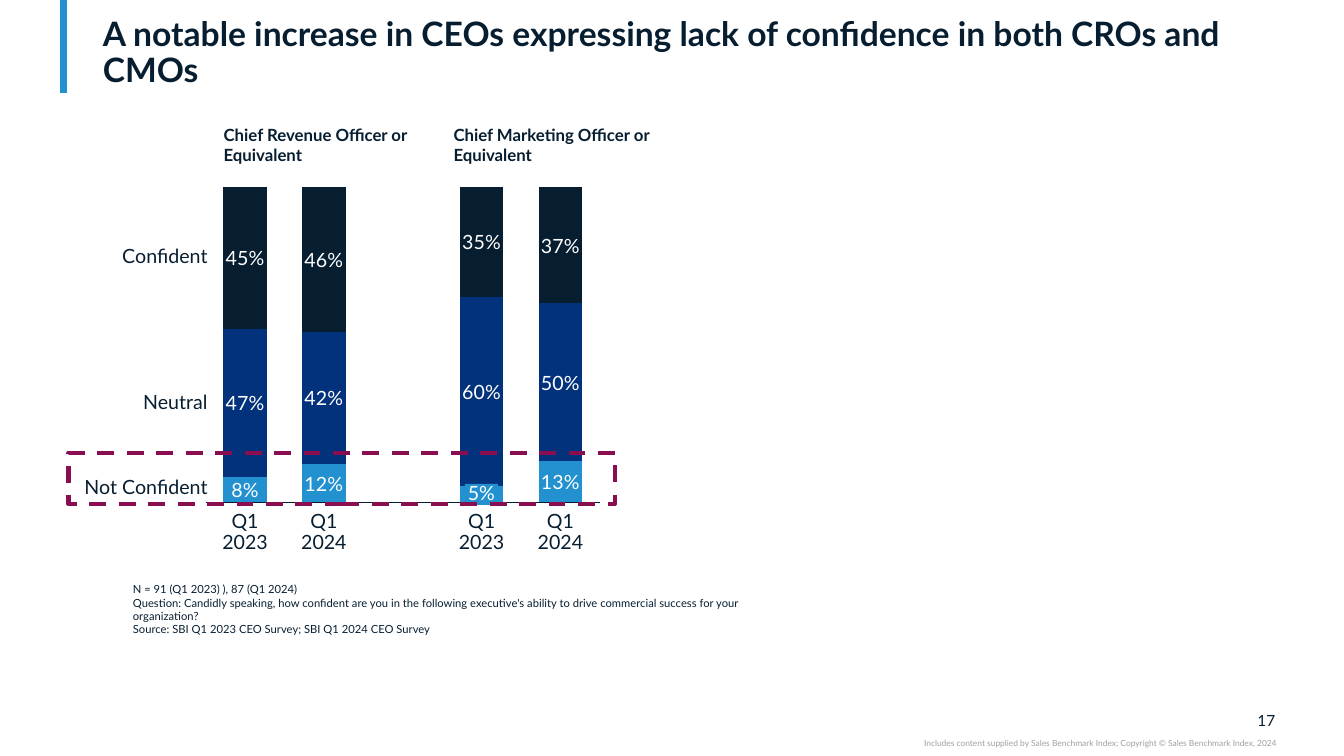
from dataclasses import dataclass

from lxml import etree
from pptx import Presentation
from pptx.chart.data import CategoryChartData
from pptx.dml.color import RGBColor
from pptx.enum import chart as ch, dml, shapes, text
from pptx.oxml import ns, parse_xml
from pptx.util import Inches, Pt


@dataclass(frozen=True)
class Theme:
    font: str = "Lato"
    ink: str = "071E31"
    navy: str = "03327C"
    sky: str = "2391CF"
    wine: str = "880E4F"
    gray: str = "A0A0A0"
    white: str = "FFFFFF"
    title: int = 24
    label: int = 14
    head: int = 12
    page: int = 11
    note: int = 8
    legal: int = 6


THEME = Theme()
LEFT, RIGHT, CENTER = text.PP_ALIGN.LEFT, text.PP_ALIGN.RIGHT, text.PP_ALIGN.CENTER
TOP, MIDDLE, BOTTOM = text.MSO_ANCHOR.TOP, text.MSO_ANCHOR.MIDDLE, text.MSO_ANCHOR.BOTTOM
NONE, FLUSH, INSET = (0, 0, 0, 0), (0.03, 0, 0.03, 0), (0.1, 0.05, 0.1, 0.05)

CHART = (1.95, 1.52, 4.09, 3.8)
PLOT = (0.022, 0.088, 0.956, 0.823)
QUARTERS = ["Q1 2023", "Q1 2024", None, "Q1 2023", "Q1 2024"]
LEVELS = [
    ("Not Confident", (8, 12, None, 5, 13), THEME.sky, 4.74),
    ("Neutral", (47, 42, None, 60, 50), THEME.navy, 3.89),
    ("Confident", (45, 46, None, 35, 37), THEME.ink, 2.45),
]
HEADS = [("Chief Revenue Officer or Equivalent", 2.12),
         ("Chief Marketing Officer or Equivalent", 4.4)]
NOTES = [
    "N = 91 (Q1 2023) ), 87 (Q1 2024)",
    "Question: Candidly speaking, how confident are you in the following "
    "executive's ability to drive commercial success for your organization?",
    "Source: SBI Q1 2023 CEO Survey; SBI Q1 2024 CEO Survey",
]
LEGAL = ("Includes content supplied by Sales Benchmark Index; "
         "Copyright © Sales Benchmark Index, 2024")


def rgb(code):
    return RGBColor.from_string(code)


def place(shape, box):
    shape.left, shape.top, shape.width, shape.height = map(Inches, box)


def write(shape, lines, size, color=THEME.ink, bold=False, align=LEFT,
          anchor=TOP, inset=NONE, lead=1.0, wrap=True):
    frame = shape.text_frame
    frame.auto_size = text.MSO_AUTO_SIZE.NONE
    frame.word_wrap = wrap
    frame.vertical_anchor = anchor
    (frame.margin_left, frame.margin_top,
     frame.margin_right, frame.margin_bottom) = map(Inches, inset)
    for i, line in enumerate(lines):
        para = frame.paragraphs[0] if i == 0 else frame.add_paragraph()
        para.alignment = align
        para.line_spacing = lead
        run = para.add_run()
        run.text = line
        run.font.name = THEME.font
        run.font.size = Pt(size)
        run.font.bold = bold
        run.font.color.rgb = rgb(color)


def add_text(slide, box, lines, size, **style):
    write(slide.shapes.add_textbox(*map(Inches, box)), lines, size, **style)


def add_rect(slide, box, fill=None, line=None):
    rect = slide.shapes.add_shape(shapes.MSO_SHAPE.RECTANGLE, *map(Inches, box))
    rect.shadow.inherit = False
    if fill:
        rect.fill.solid()
        rect.fill.fore_color.rgb = rgb(fill)
    else:
        rect.fill.background()
    if line:
        rect.line.color.rgb = rgb(line)
        rect.line.width = Pt(3)
        rect.line.dash_style = dml.MSO_LINE.DASH
    else:
        rect.line.fill.background()
    return rect


def add_bar(slide):
    bar = slide.shapes.add_connector(
        shapes.MSO_CONNECTOR.STRAIGHT,
        Inches(0.63), Inches(0), Inches(0.63), Inches(0.92))
    bar.line.color.rgb = rgb(THEME.sky)
    bar.line.width = Pt(5)
    etree.SubElement(bar.element.spPr, ns.qn("a:effectLst"))


def set_plot(chart):
    parts = "".join(f'<c:{tag} val="{val}"/>' for tag, val in zip("xywh", PLOT))
    layout = parse_xml(
        f'<c:layout {ns.nsdecls("c")}><c:manualLayout>'
        '<c:layoutTarget val="inner"/><c:xMode val="edge"/><c:yMode val="edge"/>'
        f'{parts}</c:manualLayout></c:layout>')
    area = chart.element.find(".//" + ns.qn("c:plotArea"))
    for old in area.findall(ns.qn("c:layout")):
        area.remove(old)
    area.insert(0, layout)


def hide_label(labels, index):
    labels._element.insert(0, parse_xml(
        f'<c:dLbl {ns.nsdecls("c")}><c:idx val="{index}"/>'
        '<c:delete val="1"/></c:dLbl>'))


def add_stack(slide):
    data = CategoryChartData()
    data.categories = ["1", "2", "3", "4", "5"]
    for name, vals, _, _ in LEVELS:
        data.add_series(name, vals)
    chart = slide.shapes.add_chart(
        ch.XL_CHART_TYPE.COLUMN_STACKED, *map(Inches, CHART), data).chart
    chart.has_legend = chart.has_title = False
    chart.font.name = THEME.font
    chart.font.size = Pt(10)
    chart.font.color.rgb = rgb(THEME.ink)
    set_plot(chart)

    base, scale = chart.category_axis, chart.value_axis
    base.tick_label_position = ch.XL_TICK_LABEL_POSITION.NONE
    base.major_tick_mark = base.minor_tick_mark = ch.XL_TICK_MARK.NONE
    base.format.line.color.rgb = rgb(THEME.ink)
    base.format.line.width = Pt(0.75)
    scale.minimum_scale, scale.maximum_scale = 0, 100
    scale.has_major_gridlines = False
    scale.visible = False

    plot = chart.plots[0]
    plot.gap_width, plot.overlap = 80, 100
    plot.vary_by_categories = False
    for series, (_, _, color, _) in zip(plot.series, LEVELS):
        series.format.fill.solid()
        series.format.fill.fore_color.rgb = rgb(color)
        labels = series.data_labels
        labels.show_value = True
        labels.number_format = '0"%"'
        labels.number_format_is_linked = False
        labels.position = ch.XL_LABEL_POSITION.CENTER
        labels.font.name = THEME.font
        labels.font.size = Pt(THEME.label)
        labels.font.color.rgb = rgb(THEME.white)
    hide_label(plot.series[0].data_labels, 3)


def add_names(slide):
    start = CHART[0] + PLOT[0] * CHART[2]
    step = PLOT[2] * CHART[2] / len(QUARTERS)
    wide = 0.47
    for i, name in enumerate(QUARTERS):
        if name:
            left = start + (i + 0.5) * step - wide / 2
            add_text(slide, (left, 5.07, wide, 0.42), [name], THEME.label,
                     align=CENTER, lead=0.9)
    for name, _, _, top in LEVELS:
        add_text(slide, (0.8, top, 1.26, 0.21), [name], THEME.label,
                 align=RIGHT, anchor=MIDDLE, lead=0.9, wrap=False)
    for name, left in HEADS:
        add_text(slide, (left, 1.19, 2.5, 0.51), [name], THEME.head,
                 bold=True, inset=INSET)


def main():
    deck = Presentation()
    deck.slide_width, deck.slide_height = Inches(13.33), Inches(7.5)
    slide = deck.slides.add_slide(deck.slide_layouts[5])
    add_bar(slide)
    add_text(slide, (12.32, 7.05, 0.33, 0.19), ["17"], THEME.page,
             align=RIGHT, anchor=MIDDLE)
    add_text(slide, (7.5, 7.32, 5.16, 0.1), [LEGAL], THEME.legal,
             color=THEME.gray, align=RIGHT)
    title = slide.shapes.title
    place(title, (0.92, 0.05, 11.99, 0.84))
    write(title, ["A notable increase in CEOs expressing lack of confidence "
                  "in both CROs and CMOs"], THEME.title, bold=True,
          anchor=BOTTOM, inset=(0.1, 0, 0.1, 0), lead=0.9)
    add_stack(slide)
    tag = add_rect(slide, (4.61, 4.8, 0.33, 0.21), fill=THEME.sky)
    write(tag, ["5%"], THEME.label, color=THEME.white, align=CENTER,
          anchor=MIDDLE, inset=FLUSH, lead=0.9, wrap=False)
    add_names(slide)
    add_text(slide, (1.22, 5.73, 6.37, 0.64), NOTES, THEME.note, inset=INSET)
    add_rect(slide, (0.68, 4.49, 5.42, 0.51), line=THEME.wine)
    deck.save("out.pptx")


if __name__ == "__main__":
    main()
